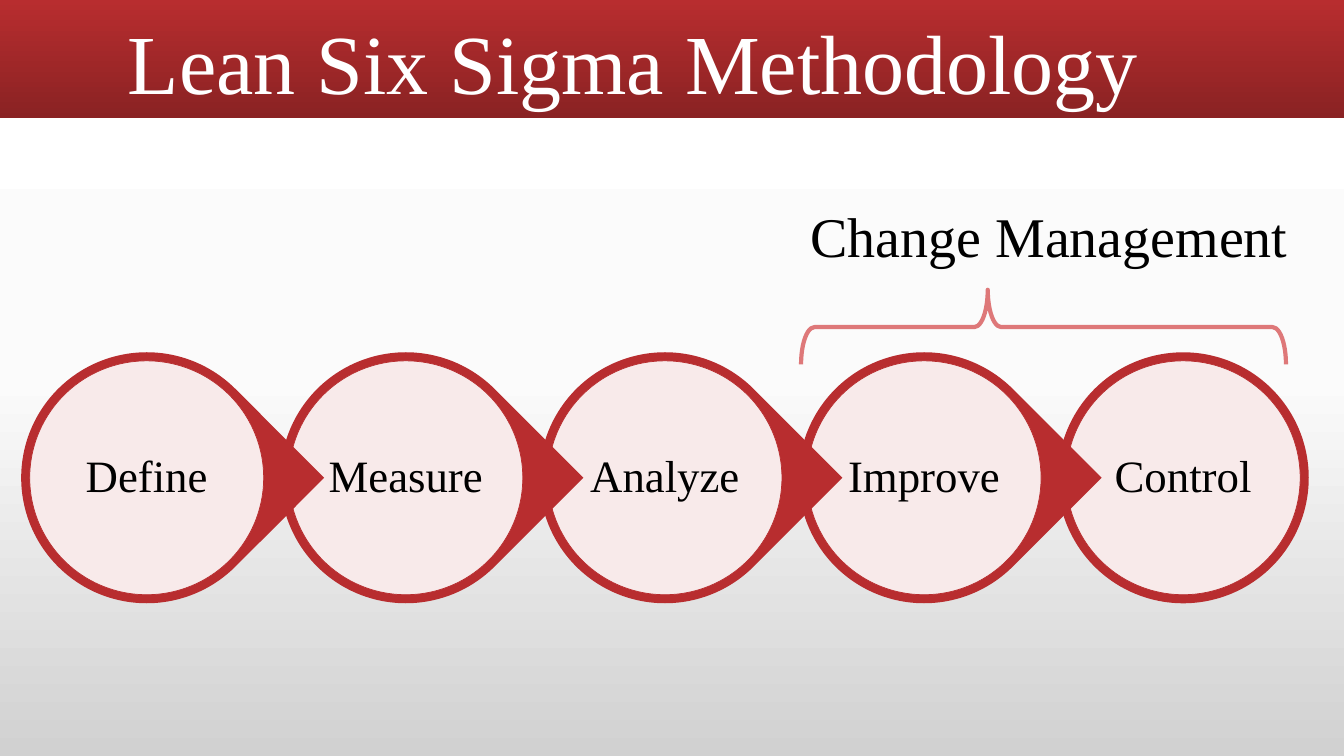
from copy import deepcopy

from lxml.etree import SubElement
from pptx import Presentation
from pptx.dml.color import RGBColor
from pptx.enum.shapes import MSO_SHAPE as Shape
from pptx.enum.text import MSO_ANCHOR as Anchor, PP_ALIGN as Align
from pptx.oxml.ns import qn
from pptx.util import Inches, Pt

RED = RGBColor(0xB8, 0x2D, 0x2F)
DARK_RED = RGBColor(0x8A, 0x22, 0x23)
PINK = RGBColor(0xDE, 0x78, 0x79)
WHITE = RGBColor(0xFF, 0xFF, 0xFF)
PALE_GRAY = RGBColor(0xFB, 0xFB, 0xFB)
GRAY = RGBColor(0xD1, 0xD1, 0xD1)
BLACK = RGBColor(0, 0, 0)

STEPS = ["Define", "Measure", "Analyze", "Improve", "Control"]
STEP_LEFT, STEP_PITCH, CENTER_Y = 0.21, 2.57, 4.74
OUTER, INNER, LABEL = 2.49, 2.32, 1.66


class SlideBuilder:
    """Draws styled elements on one slide."""

    font = "Times New Roman"

    def __init__(self, page):
        self.page = page

    def gradient(self, fill, holder, stops):
        fill.gradient()
        fill.gradient_angle = 270
        stop_list = next(holder.iter(qn("a:gsLst")))
        for _ in stops[2:]:
            stop_list.append(deepcopy(stop_list[-1]))
        for stop, (position, color) in zip(fill.gradient_stops, stops):
            stop.position = position
            stop.color.rgb = color

    def background(self, stops):
        self.gradient(self.page.background.fill, self.page.element, stops)

    def shape(self, kind, left, top, width, height, fill=None, opacity=None,
              line=None, weight=0.5, rotation=0):
        shape = self.page.shapes.add_shape(
            kind, Inches(left), Inches(top), Inches(width), Inches(height))
        shape.shadow.inherit = False
        shape.rotation = rotation
        if fill is None:
            shape.fill.background()
        else:
            shape.fill.solid()
            shape.fill.fore_color.rgb = fill
        if opacity is not None:
            color = next(shape.element.spPr.iter(qn("a:srgbClr")))
            SubElement(color, qn("a:alpha"), val=str(opacity * 1000))
        if line is None:
            shape.line.fill.background()
        else:
            shape.line.color.rgb = line
            shape.line.width = Pt(weight)
        return shape

    def band(self, left, top, width, height, stops):
        band = self.shape(Shape.RECTANGLE, left, top, width, height)
        self.gradient(band.fill, band.element, stops)

    def text(self, text, left, top, width, height, size, color=BLACK,
             align=Align.LEFT, anchor=Anchor.MIDDLE, spacing=1.0, inset=None):
        box = self.page.shapes.add_textbox(
            Inches(left), Inches(top), Inches(width), Inches(height))
        frame = box.text_frame
        frame.word_wrap = True
        frame.vertical_anchor = anchor
        if inset is not None:
            frame.margin_left = frame.margin_right = Inches(inset)
            frame.margin_top = frame.margin_bottom = Inches(inset)
        para = frame.paragraphs[0]
        para.alignment = align
        para.line_spacing = spacing
        span = para.add_run()
        span.text = text
        span.font.name = self.font
        span.font.size = Pt(size)
        span.font.color.rgb = color

    def step(self, name, left, is_last):
        def square(size):
            return left + (OUTER - size) / 2, CENTER_Y - size / 2, size, size

        if is_last:
            self.shape(Shape.OVAL, *square(OUTER), fill=RED)
        else:
            self.shape(Shape.TEAR, *square(OUTER), fill=RED, rotation=45)
        self.shape(Shape.OVAL, *square(INNER), fill=WHITE, opacity=90, line=RED)
        self.text(name, *square(LABEL), size=32, align=Align.CENTER,
                  spacing=0.9, inset=0.04)

    def brace(self, left, top, width, height):
        brace = self.shape(Shape.RIGHT_BRACE, left, top, width, height,
                           line=PINK, weight=3, rotation=270)
        brace.adjustments[0] = 0.18
        brace.adjustments[1] = 0.385


def main():
    deck = Presentation()
    deck.slide_width, deck.slide_height = Inches(13.33), Inches(7.5)
    builder = SlideBuilder(deck.slides.add_slide(deck.slide_layouts[6]))

    builder.background([(0, WHITE), (0.5, PALE_GRAY), (1, GRAY)])
    builder.band(0, 0, 13.33, 1.17, [(0, RED), (1, DARK_RED)])
    builder.text("Lean Six Sigma Methodology", 1.17, 0.11, 11, 1.06, size=60,
                 color=WHITE, anchor=Anchor.BOTTOM, spacing=0.9)
    for index, name in reversed(list(enumerate(STEPS))):
        builder.step(name, STEP_LEFT + index * STEP_PITCH, name == STEPS[-1])
    builder.brace(9.98, 0.84, 0.74, 4.81)
    builder.text("Change Management", 7.94, 1.95, 5.48, 0.77, size=40)
    deck.save("out.pptx")


if __name__ == "__main__":
    main()
